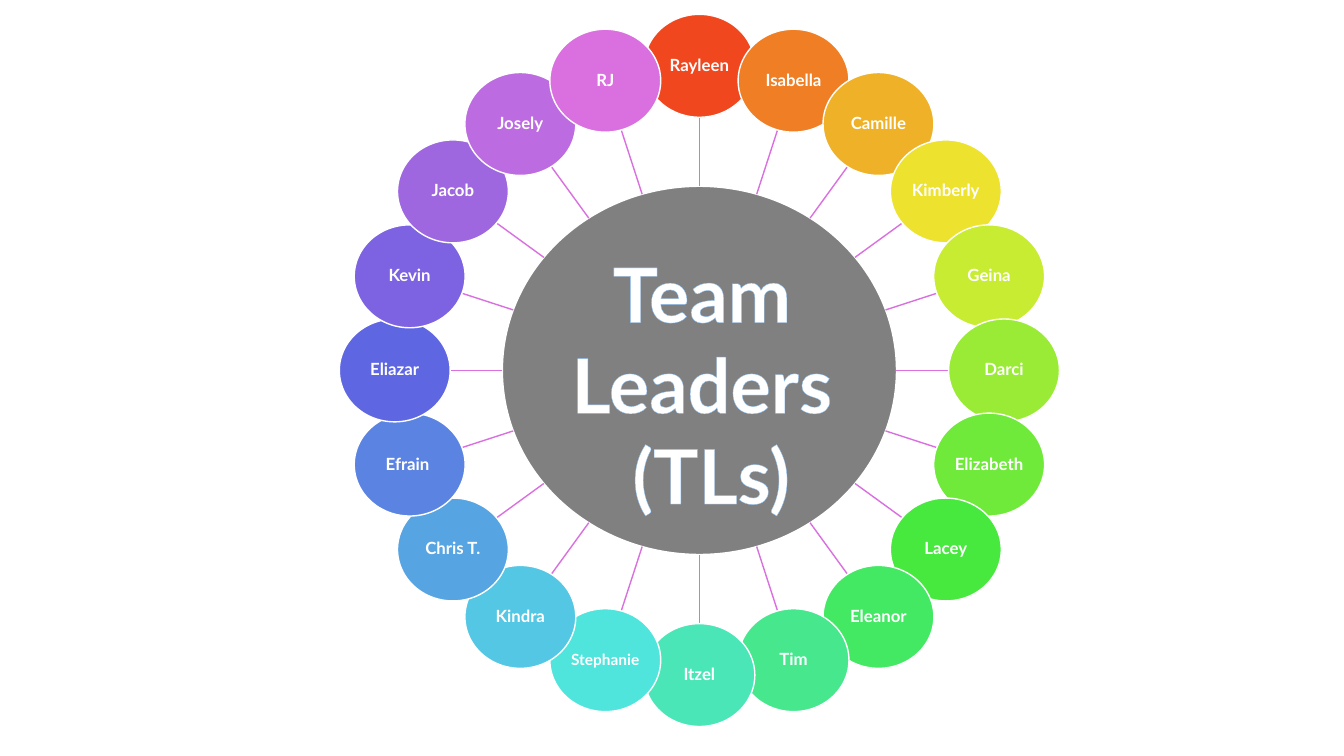
import math
from lxml import etree
from pptx import Presentation
from pptx.dml.color import RGBColor
from pptx.enum import shapes, text
from pptx.oxml import ns
from pptx.util import Pt

WHITE = RGBColor(0xFF, 0xFF, 0xFF)
HUB_GRAY = RGBColor(0x80, 0x80, 0x80)
SPOKE_PINK = RGBColor(0xDA, 0x6F, 0xDF)
TITLE_EDGE = RGBColor(0x8B, 0xBE, 0xF1)
FONT = "Lato"

CENTER_X, CENTER_Y = 499.6, 264.6
RING_RADIUS = 217.6
HUB_WIDTH, HUB_HEIGHT = 281.5, 263
LEADER_WIDTH, LEADER_HEIGHT = 79.2, 73.5

LEADERS = [
    ("Rayleen", RGBColor(0xF1, 0x47, 0x1F)),
    ("Isabella", RGBColor(0xF0, 0x7E, 0x24)),
    ("Camille", RGBColor(0xEE, 0xB1, 0x28)),
    ("Kimberly", RGBColor(0xED, 0xE2, 0x2D)),
    ("Geina", RGBColor(0xC8, 0xEC, 0x31)),
    ("Darci", RGBColor(0x9A, 0xEB, 0x36)),
    ("Elizabeth", RGBColor(0x6F, 0xEA, 0x3A)),
    ("Lacey", RGBColor(0x47, 0xE9, 0x3E)),
    ("Eleanor", RGBColor(0x43, 0xE8, 0x63)),
    ("Tim", RGBColor(0x47, 0xE7, 0x8E)),
    ("Itzel", RGBColor(0x4B, 0xE6, 0xB7)),
    ("Stephanie", RGBColor(0x4F, 0xE5, 0xDD)),
    ("Kindra", RGBColor(0x53, 0xC7, 0xE4)),
    ("Chris T.", RGBColor(0x57, 0xA4, 0xE3)),
    ("Efrain ", RGBColor(0x5B, 0x84, 0xE2)),
    ("Eliazar", RGBColor(0x5F, 0x66, 0xE2)),
    ("Kevin", RGBColor(0x7D, 0x63, 0xE1)),
    ("Jacob", RGBColor(0x9E, 0x67, 0xE0)),
    ("Josely", RGBColor(0xBD, 0x6B, 0xE0)),
    ("RJ", RGBColor(0xDA, 0x6F, 0xDF)),
]

prs = Presentation()
prs.slide_width, prs.slide_height = Pt(960), Pt(540)
slide = prs.slides.add_slide(prs.slide_layouts[5])


def add_circle(x, y, width, height, color):
    circle = slide.shapes.add_shape(
        shapes.MSO_SHAPE.OVAL, Pt(x - width / 2), Pt(y - height / 2), Pt(width), Pt(height))
    circle.shadow.inherit = False
    circle.fill.solid()
    circle.fill.fore_color.rgb = color
    circle.line.color.rgb = WHITE
    circle.line.width = Pt(1)
    return circle


def edge_distance(width, height, angle):
    return 1 / math.hypot(math.sin(angle) * 2 / width, math.cos(angle) * 2 / height)


add_circle(CENTER_X, CENTER_Y, HUB_WIDTH, HUB_HEIGHT, HUB_GRAY)

for position, (name, color) in enumerate(LEADERS):
    angle = math.tau * position / len(LEADERS)
    across, down = math.sin(angle), -math.cos(angle)
    start = edge_distance(HUB_WIDTH, HUB_HEIGHT, angle)
    end = RING_RADIUS - edge_distance(LEADER_WIDTH, LEADER_HEIGHT, angle)

    spoke = slide.shapes.add_connector(
        shapes.MSO_CONNECTOR.STRAIGHT,
        Pt(CENTER_X + start * across), Pt(CENTER_Y + start * down),
        Pt(CENTER_X + end * across), Pt(CENTER_Y + end * down))
    spoke.line.color.rgb = SPOKE_PINK
    spoke.line.width = Pt(1)
    etree.SubElement(spoke._element.spPr, ns.qn("a:effectLst"))

    leader = add_circle(CENTER_X + RING_RADIUS * across, CENTER_Y + RING_RADIUS * down,
                        LEADER_WIDTH, LEADER_HEIGHT, color)
    frame = leader.text_frame
    frame.margin_left = frame.margin_right = Pt(0.75)
    frame.margin_top = frame.margin_bottom = Pt(0.75)
    frame.vertical_anchor = text.MSO_ANCHOR.MIDDLE
    label = frame.paragraphs[0]
    label.alignment = text.PP_ALIGN.CENTER
    label.line_spacing = 0.9
    run = label.add_run()
    run.text = name
    run.font.name = FONT
    run.font.size = Pt(11 if name == "Stephanie" else 12)
    run.font.bold = True
    run.font.color.rgb = WHITE

title = slide.shapes.title
title.left, title.top, title.width, title.height = Pt(385.2), Pt(172.8), Pt(245.5), Pt(203.8)
slide.shapes._spTree.append(title._element)
heading = title.text_frame
heading.word_wrap = False
heading.auto_size = text.MSO_AUTO_SIZE.SHAPE_TO_FIT_TEXT
heading.vertical_anchor = text.MSO_ANCHOR.TOP
for row, words in enumerate(["Team ", "Leaders ", "(TLs)"]):
    line = heading.add_paragraph() if row else heading.paragraphs[0]
    line.alignment = text.PP_ALIGN.CENTER
    run = line.add_run()
    run.text = words
    run.font.name = FONT
    run.font.size = Pt(54)
    run.font.bold = True
    run.font.color.rgb = WHITE
    outline = etree.Element(ns.qn("a:ln"), w=str(Pt(0.52)))
    edge_fill = etree.SubElement(outline, ns.qn("a:solidFill"))
    etree.SubElement(edge_fill, ns.qn("a:srgbClr"), val=str(TITLE_EDGE))
    run.font._element.insert(0, outline)

prs.save("out.pptx")
